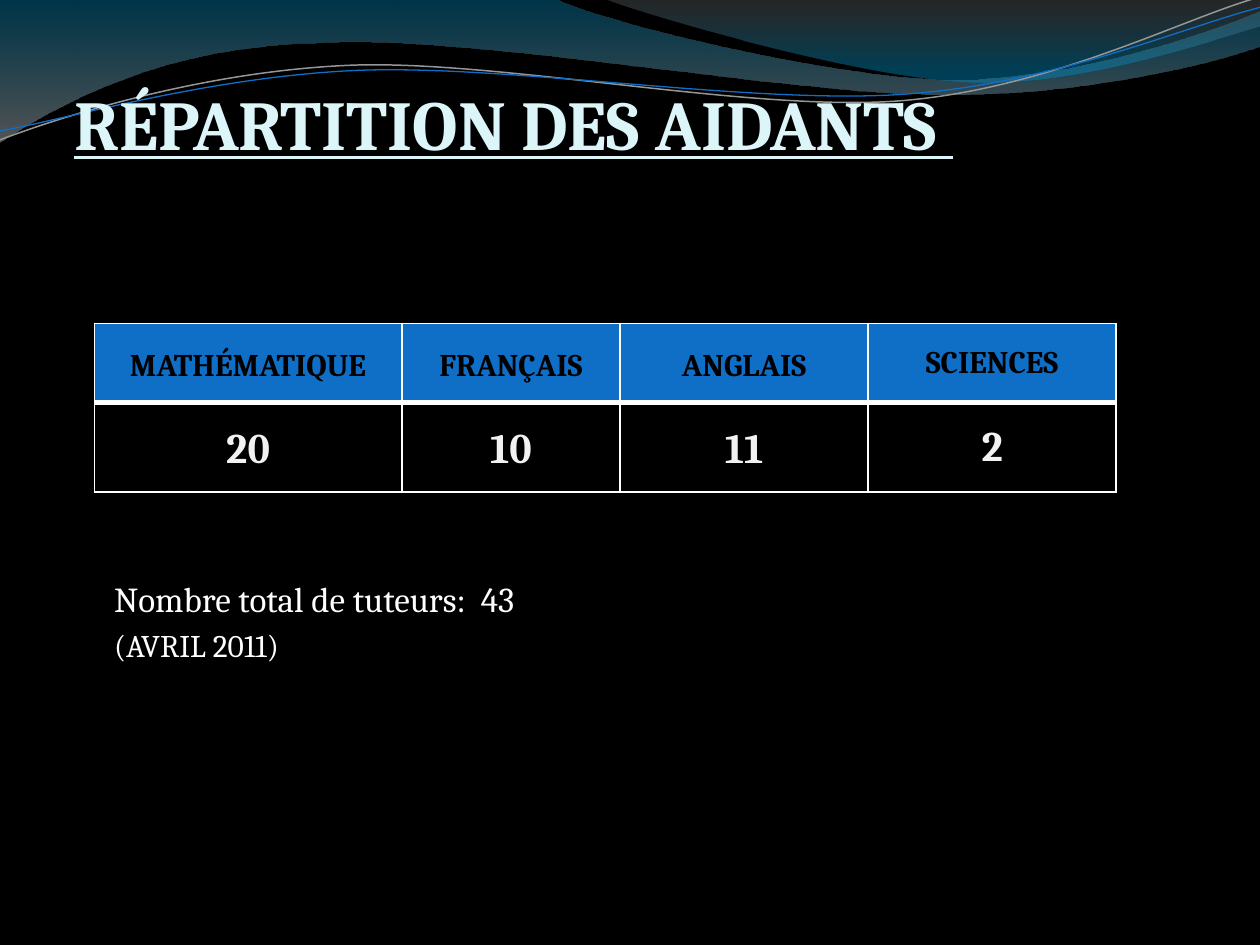
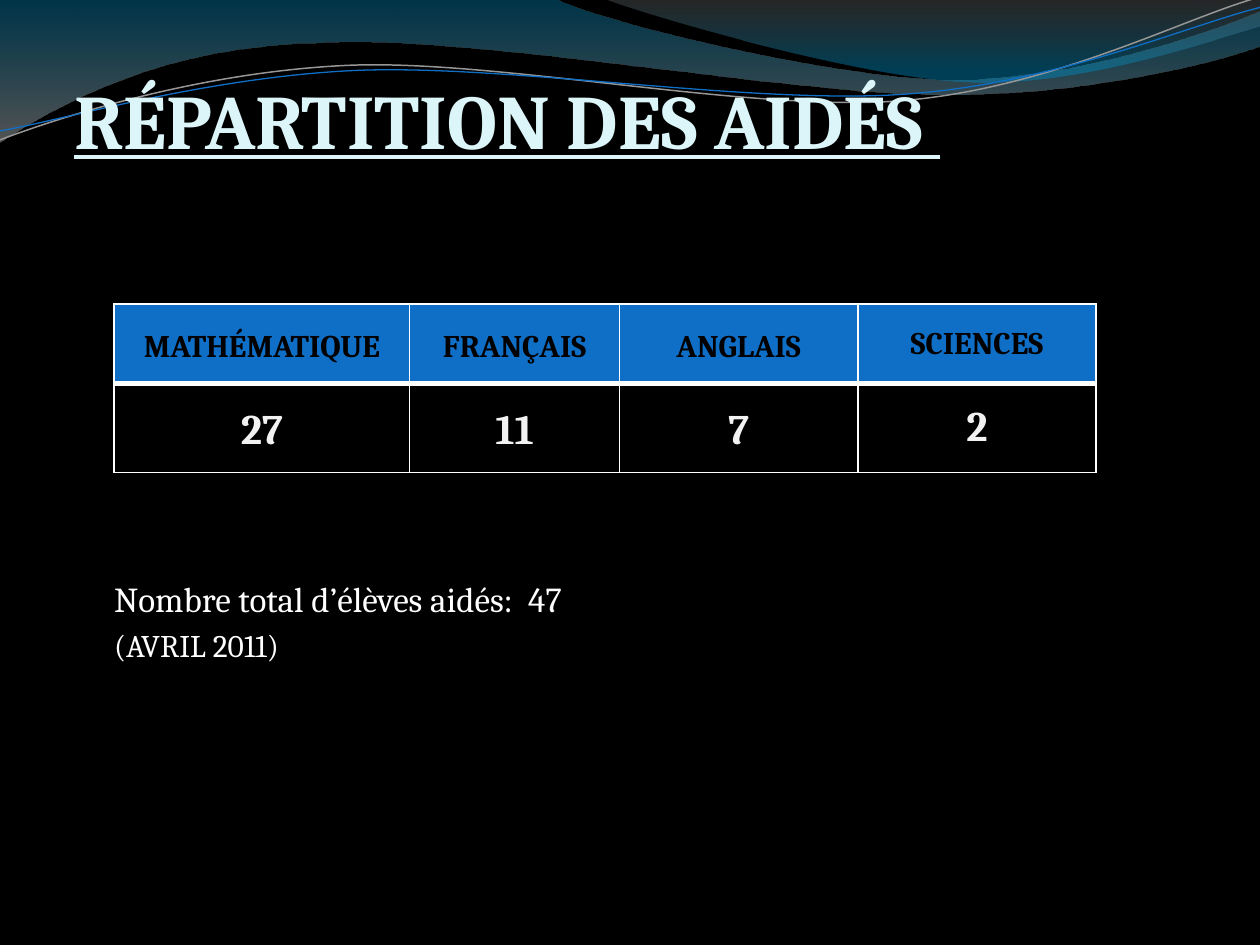
from dataclasses import dataclass

from lxml import etree
from pptx import Presentation
from pptx.dml.color import RGBColor
from pptx.enum.text import MSO_ANCHOR, MSO_AUTO_SIZE, PP_ALIGN
from pptx.oxml.ns import qn
from pptx.util import Cm, Pt

LEFT, CENTER = PP_ALIGN.LEFT, PP_ALIGN.CENTER
MIDDLE, BOTTOM = MSO_ANCHOR.MIDDLE, MSO_ANCHOR.BOTTOM
NO_AUTOFIT = MSO_AUTO_SIZE.NONE

COLORS = {
    "black": "000000", "white": "FFFFFF", "number": "F2F2F2",
    "title": "DBF5F9", "blue": "0F6FC6", "line_grey": "969696",
    "teal": "0074A1", "silver": "9A9A9A", "grey": "7E7E7E", "cyan": "008BBF",
}
FONT = "Cambria"
TITLE_FORMAT = {"bold": True, "underline": True}
SUBJECTS = ("MATHÉMATIQUE", "FRANÇAIS", "ANGLAIS", "SCIENCES")
COL_WEIGHTS = (6.2, 4.4, 5, 5)
ROW_HEIGHTS = (1.6, 1.8)
LINE_TILT = 357.3


@dataclass
class Stop:
    position: float
    color: str
    opacity: int


@dataclass
class Wave:
    """Outline in cm: pairs are straight ends, sixes are Bézier curves."""
    start: tuple
    segments: tuple
    stops: tuple = ()
    line: str = ""
    weight: float = 0


@dataclass
class Distribution:
    title: str
    title_size: int
    left: float
    top: float
    width: float
    counts: tuple
    total: str


WAVES = (
    Wave((0, -0.03), ((11.18, -0.03),
                      (12.09, 0.43, 16.87, 1.6, 19.25, 1.6),
                      (21.67, 1.6, 24.33, 0.66, 25.4, 0.23),
                      (25.43, 0.91),
                      (24.97, 1.12, 22.1, 1.93, 18.95, 1.9),
                      (15.8, 1.9, 9.7, 0.71, 6.53, 0.86),
                      (3.28, 0.89, 1.17, 2.11, -0.03, 2.87)),
         stops=(Stop(0, "teal", 45), Stop(1, "silver", 55))),
    Wave((12.17, -0.03), ((12.93, 0.28, 17.32, 1.57, 19.53, 1.65),
                          (21.74, 1.75, 24.41, 0.81, 25.4, 0.53),
                          (25.4, 0)),
         stops=(Stop(0, "grey", 30), Stop(0.8, "cyan", 45))),
    Wave((-0.05, 2.22), ((1.19, 1.82, 4.02, 1.04, 7.05, 1.05),
                         (10.05, 1.07, 15.02, 2.37, 18.08, 2.29),
                         (21.13, 2.2, 23.86, 0.91, 25.41, 0.55)),
         line="line_grey", weight=0.85),
    Wave((-0.04, 2.04), ((1.16, 1.9, 4.17, 1.15, 7.2, 1.16),
                         (10.25, 1.18, 15.13, 2.23, 18.19, 2.16),
                         (21.22, 2.1, 23.93, 1.06, 25.45, 0.75)),
         line="blue", weight=0.75),
)

DISTRIBUTIONS = (
    Distribution("RÉPARTITION DES AIDANTS ", 40, 1.9, 6.52, 20.6,
                 (20, 10, 11, 2), "Nombre total de tuteurs:  43"),
    Distribution("RÉPARTITION DES AIDÉS ", 44, 2.3, 6.13, 19.8,
                 (27, 11, 7, 2), "Nombre total d’élèves aidés:  47"),
)


def rgb(name: str) -> RGBColor:
    return RGBColor.from_string(COLORS[name])


def set_format(target, values: dict) -> None:
    for name, value in values.items():
        setattr(target, name, value)


def write(p, text: str, size: int, color: str, align=LEFT, **extra) -> None:
    p.alignment = align
    r = p.add_run()
    r.text = text
    set_format(r.font, {"name": FONT, "size": Pt(size), **extra})
    r.font.color.rgb = rgb(color)


# Waves across the top
def bend(sp, segments: tuple) -> None:
    """Join each three straight steps of a curve into one Bézier segment."""
    geom = next(sp.element.iter(qn("a:path")))
    steps = iter(geom.findall(qn("a:lnTo")))
    for seg in segments:
        step = next(steps)
        if len(seg) == 2:
            continue
        curve = etree.Element(qn("a:cubicBezTo"))
        step.addprevious(curve)
        for node in (step, next(steps), next(steps)):
            curve.append(node[0])
            geom.remove(node)


def add_wave(shapes, wave: Wave):
    points = [(Cm(seg[i]), Cm(seg[i + 1]))
              for seg in wave.segments for i in range(0, len(seg), 2)]
    builder = shapes.build_freeform(Cm(wave.start[0]), Cm(wave.start[1]))
    builder.add_line_segments(points, close=bool(wave.stops))
    sp = builder.convert_to_shape()
    bend(sp, wave.segments)
    sp.shadow.inherit = False
    if not wave.stops:
        sp.rotation = LINE_TILT
        sp.fill.background()
        sp.line.color.rgb = rgb(wave.line)
        sp.line.width = Pt(wave.weight)
        return sp
    sp.line.fill.background()
    sp.fill.gradient()
    sp.fill.gradient_angle = 270
    for gs, stop in zip(sp.fill.gradient_stops, wave.stops):
        gs.position = stop.position
        gs.color.rgb = rgb(stop.color)
    for clr, stop in zip(sp.element.spPr.iter(qn("a:srgbClr")), wave.stops):
        etree.SubElement(clr, qn("a:alpha"), val=str(stop.opacity * 1000))
    return sp


def add_title(slide, item: Distribution) -> None:
    title = slide.shapes.title
    set_format(title, {"left": Cm(1.5), "top": Cm(0.93), "width": Cm(21.82), "height": Cm(2.39)})
    tf = title.text_frame
    set_format(tf, {"margin_left": 0, "margin_top": 0, "margin_right": Cm(0.05),
                    "margin_bottom": 0, "vertical_anchor": BOTTOM,
                    "auto_size": NO_AUTOFIT, "word_wrap": True})
    write(tf.paragraphs[0], item.title, item.title_size, "title", **TITLE_FORMAT)


# Table of subjects
def set_borders(cell, widths: dict) -> None:
    tc_pr = cell._tc.get_or_add_tcPr()
    for i, (side, width) in enumerate(widths.items()):
        ln = etree.Element(qn(f"a:ln{side}"), w=str(Pt(width)))
        fill = etree.SubElement(ln, qn("a:solidFill"))
        etree.SubElement(fill, qn("a:srgbClr"), val=COLORS["white"])
        tc_pr.insert(i, ln)


def add_subject_table(slide, item: Distribution) -> None:
    rows = (SUBJECTS, item.counts)
    table = slide.shapes.add_table(len(rows), len(SUBJECTS), Cm(item.left), Cm(item.top),
                                   Cm(item.width), Cm(sum(ROW_HEIGHTS))).table
    table.horz_banding = False
    for col, weight in zip(table.columns, COL_WEIGHTS):
        col.width = Cm(item.width * weight / sum(COL_WEIGHTS))
    for i, values in enumerate(rows):
        header = i == 0
        table.rows[i].height = Cm(ROW_HEIGHTS[i])
        for j, value in enumerate(values):
            cell = table.cell(i, j)
            cell.vertical_anchor = MIDDLE
            # The last column sits slightly higher than the others
            lowered = 0.25 if header else 0.22
            cell.margin_top = Cm(0.13 if j == len(values) - 1 else lowered)
            if header:
                cell.fill.solid()
                cell.fill.fore_color.rgb = rgb("blue")
            else:
                cell.fill.background()
            set_borders(cell, {"L": 1, "R": 1, "T": 1 if header else 3, "B": 3 if header else 1})
            write(cell.text_frame.paragraphs[0], str(value), 18 if header else 24,
                  "black" if header else "number", CENTER, bold=True)


def add_total(slide, item: Distribution) -> None:
    tf = slide.shapes.add_textbox(Cm(2.3), Cm(11.51), Cm(21.59), Cm(5.05)).text_frame
    set_format(tf, {"word_wrap": True, "margin_left": 0, "margin_right": Cm(0.05),
                    "margin_top": Cm(0.13), "margin_bottom": Cm(0.13)})
    write(tf.paragraphs[0], item.total, 20, "white")
    p = tf.add_paragraph()
    p.space_before = Pt(4)
    write(p, "(AVRIL 2011)", 18, "white")


def main() -> None:
    prs = Presentation()
    prs.slide_width, prs.slide_height = Cm(25.4), Cm(19.05)
    background = prs.slide_master.background.fill
    background.solid()
    background.fore_color.rgb = rgb("black")
    layout = prs.slide_layouts[5]
    slides = [prs.slides.add_slide(layout) for _ in DISTRIBUTIONS]

    # Freeforms are built on a slide, then moved to the shared layout
    for wave in WAVES:
        layout.shapes._spTree.append(add_wave(slides[0].shapes, wave).element)

    for slide, item in zip(slides, DISTRIBUTIONS):
        add_title(slide, item)
        add_subject_table(slide, item)
        add_total(slide, item)
    prs.save("out.pptx")


if __name__ == "__main__":
    main()
